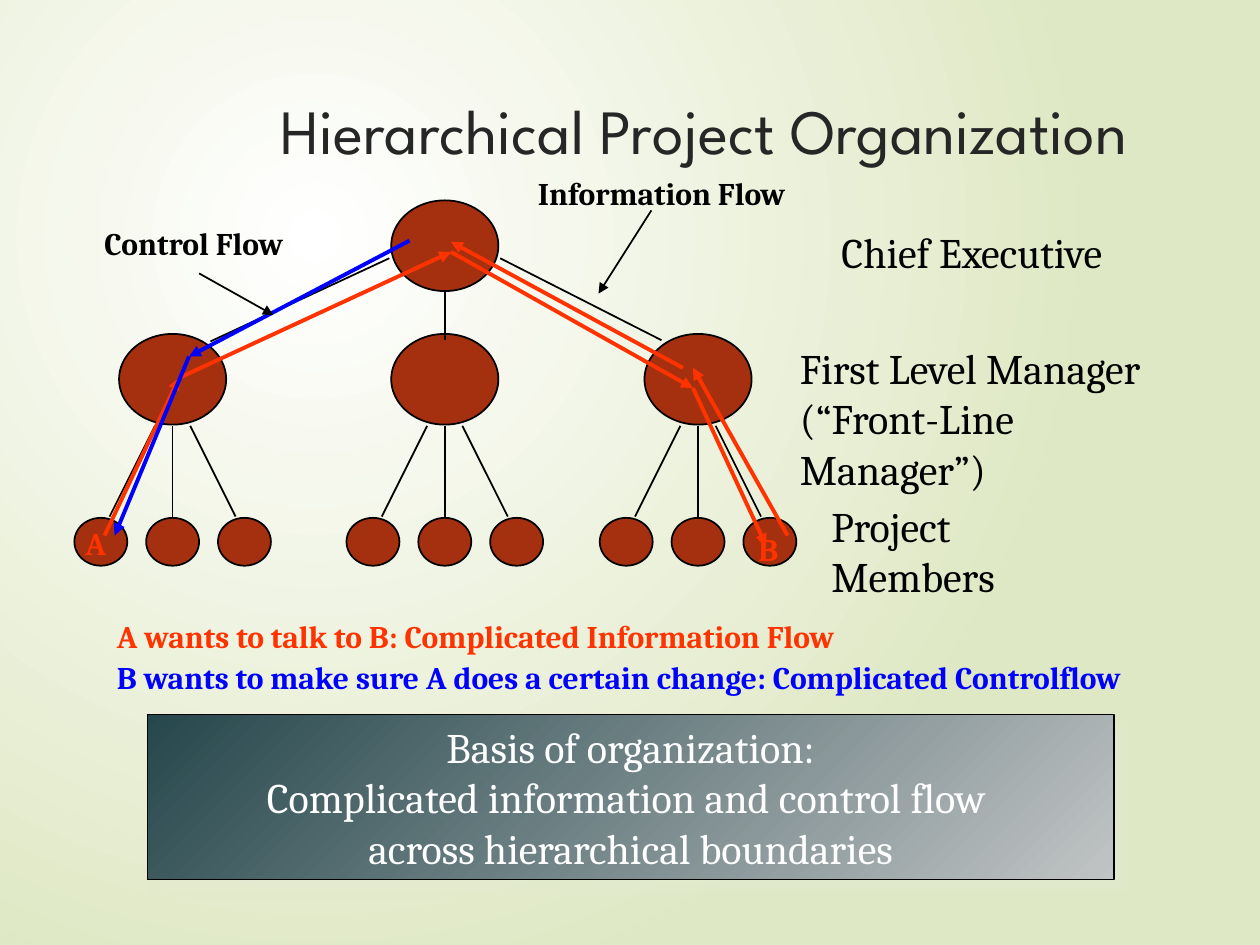
from lxml import etree
from pptx import Presentation
from pptx import util as u
from pptx.dml import color
from pptx.enum import shapes, text
from pptx.oxml import ns, xmlchemy

C = {"black": "000000", "white": "FFFFFF", "title": "262626", "node": "A53010",
     "info": "FF3300", "control": "0000FF", "pale": "DFE8C4",
     "teal": "26474C", "gray": "C1C4C5", "shadow": "E3EACF"}
RGB = {name: color.RGBColor.from_string(value) for name, value in C.items()}
LABEL = {"name": "Cambria", "size": u.Pt(24)}
NOTE = {"name": "Cambria", "size": u.Pt(18), "bold": True}
TITLE = {"name": "League Spartan", "size": u.Pt(36)}

prs = Presentation()
prs.slide_width, prs.slide_height = u.Inches(10), u.Inches(7.5)
s = prs.slides.add_slide(prs.slide_layouts[6])


def add_line(start, end, c="black", width=1, arrow=False):
    ln = s.shapes.add_connector(
        shapes.MSO_CONNECTOR.STRAIGHT, *(u.Inches(v) for v in start + end))
    ln.line.color.rgb = RGB[c]
    ln.line.width = u.Pt(width)
    if arrow:
        etree.SubElement(ln.line._get_or_add_ln(), ns.qn("a:tailEnd"), type="triangle")
    etree.SubElement(ln._element.spPr, ns.qn("a:effectLst"))


def write(sp, lines, fmt, c, align=text.PP_ALIGN.LEFT):
    tf = sp.text_frame
    tf.word_wrap = True
    for i, line in enumerate(lines):
        p = tf.add_paragraph() if i else tf.paragraphs[0]
        p.alignment = align
        r = p.add_run()
        r.text = line
        r.font.color.rgb = RGB[c]
        for key, value in fmt.items():
            setattr(r.font, key, value)


fill = s.background.fill
fill.gradient()
for stop, c in zip(fill.gradient_stops, ("white", "pale")):
    stop.color.rgb = RGB[c]
lin = s._element.find(".//" + ns.qn("a:lin"))
radial = etree.Element(ns.qn("a:path"), path="circle")
etree.SubElement(radial, ns.qn("a:fillToRect"),
                 l="50000", t="50000", r="100000", b="100000")
lin.getparent().replace(lin, radial)

chief_x = 3.53
manager_xs = (1.37, chief_x, 5.54)
nodes = [(chief_x, 1.95, 0.85, 0.72)]
for x in manager_xs:
    nodes.append((x, 3.01, 0.85, 0.72))
    nodes += [(x + 0.57 * i, 4.3, 0.42, 0.38) for i in (-1, 0, 1)]
for x, y, w, h in nodes:
    sp = s.shapes.add_shape(shapes.MSO_SHAPE.OVAL, u.Inches(x - w / 2),
                            u.Inches(y - h / 2), u.Inches(w), u.Inches(h))
    sp.shadow.inherit = False
    sp.fill.solid()
    sp.fill.fore_color.rgb = RGB["node"]
    sp.line.color.rgb = RGB["black"]
    sp.line.width = u.Pt(1)

for x in manager_xs:
    for i in (-1, 0, 1):
        add_line((x + 0.14 * i, 3.38), (x + 0.5 * i, 4.1))
add_line((chief_x, 2.32), (chief_x, 2.7))
add_line((3.97, 2.05), (5.25, 2.7))
add_line((3.09, 2.05), (1.67, 2.71))

box = s.shapes.add_shape(shapes.MSO_SHAPE.RECTANGLE, u.Inches(1.17), u.Inches(5.67),
                         u.Inches(7.67), u.Inches(1.31))
box.shadow.inherit = False
box.fill.gradient()
box.fill.gradient_angle = 315
for stop, c in zip(box.fill.gradient_stops, ("teal", "gray")):
    stop.color.rgb = RGB[c]
box.line.color.rgb = RGB["black"]
box.line.width = u.Pt(1)
shadow = etree.SubElement(
    box._element.spPr.find(ns.qn("a:effectLst")), ns.qn("a:outerShdw"),
    blurRad=str(u.Pt(5)), dist=str(u.Pt(8.5)), dir="2700000")
shadow_color = etree.SubElement(shadow, ns.qn("a:srgbClr"), val=C["shadow"])
etree.SubElement(shadow_color, ns.qn("a:alpha"), val="75000")
write(box, ["Basis of organization:", "Complicated information and control flow ",
            "across hierarchical boundaries"], LABEL, "white", text.PP_ALIGN.CENTER)

info_to_b = [(0.83, 4.25), (1.42, 3), (3.58, 2), (5.5, 3.08), (6.08, 4.33)]
control_to_a = [(3.25, 1.91), (1.5, 2.83), (0.91, 4.25)]
for c, route in (("info", info_to_b), ("control", control_to_a),
                 ("info", [(6.25, 4.25), (5.5, 2.92)]),
                 ("info", [(5.42, 2.92), (3.58, 1.92)])):
    for start, end in zip(route, route[1:]):
        add_line(start, end, c, 2.25, True)
add_line((1.58, 2.17), (2.17, 2.5), arrow=True)
add_line((5.17, 1.67), (4.75, 2.33), arrow=True)

for x, y, w, h, lines, fmt, c in (
    (2.13, 0.68, 7.21, 1.4, ["Hierarchical Project Organization"], TITLE, "title"),
    (6.58, 1.75, 2.35, 0.5, ["Chief Executive"], LABEL, "black"),
    (6.25, 2.67, 3.2, 0.9, ["First Level Manager", "(“Front-Line Manager”)"], LABEL, "black"),
    (6.5, 3.92, 2.4, 0.5, ["Project Members"], LABEL, "black"),
    (0.58, 4.11, 0.4, 0.4, ["A"], NOTE, "info"),
    (5.92, 4.16, 0.4, 0.4, ["B"], NOTE, "info"),
    (0.83, 4.85, 6.11, 0.4, ["A wants to talk to B: Complicated Information Flow"], NOTE, "info"),
    (0.83, 5.17, 8.39, 0.4,
     ["B wants to make sure A does a certain change: Complicated Controlflow"], NOTE, "control"),
    (0.73, 1.73, 1.71, 0.4, ["Control Flow"], NOTE, "black"),
    (4.17, 1.33, 2.22, 0.4, ["Information Flow"], NOTE, "black"),
):
    sp = s.shapes.add_textbox(*(u.Inches(v) for v in (x, y, w, h)))
    write(sp, lines, fmt, c)

prs.save("out.pptx")
